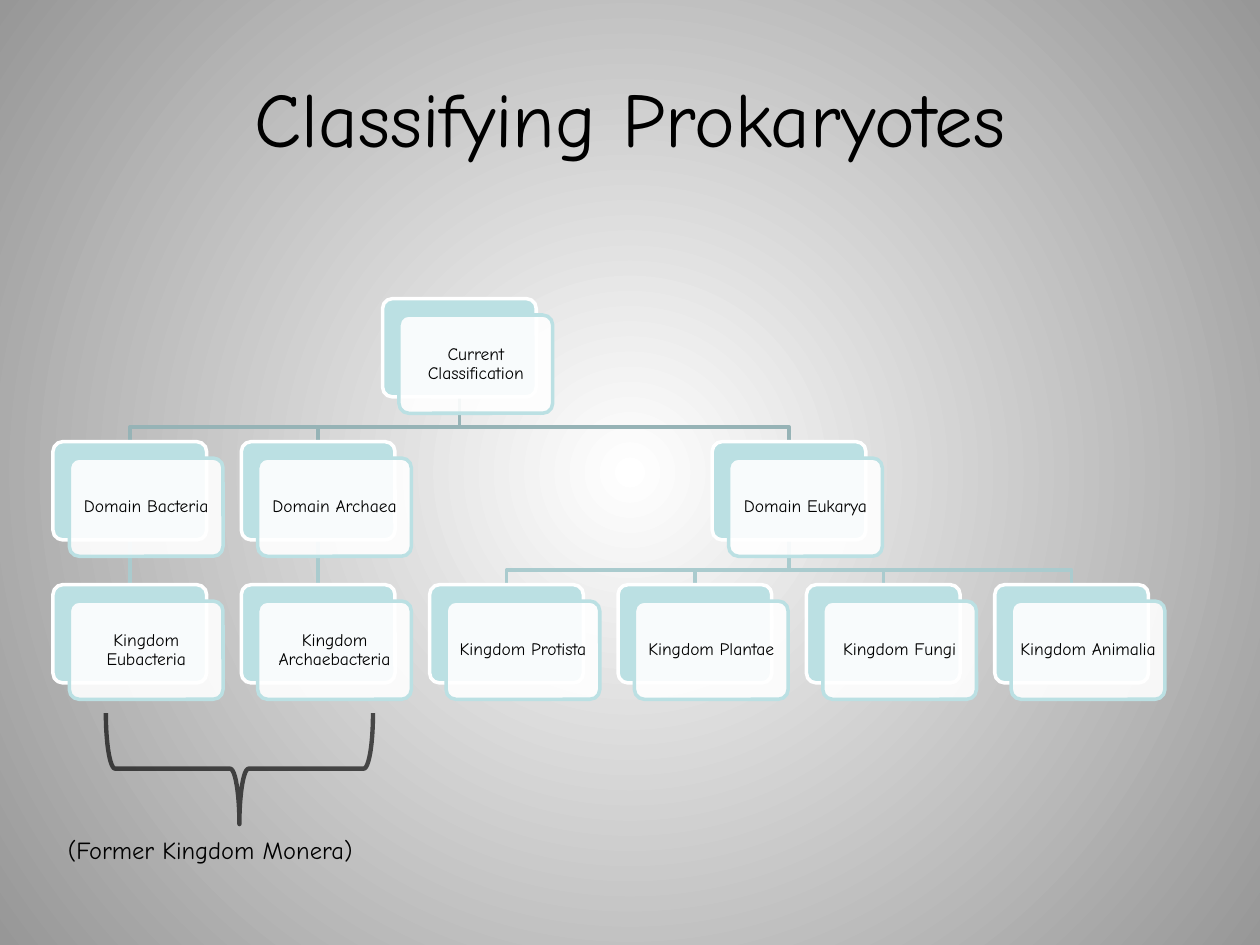
from lxml import etree
from pptx import Presentation
from pptx.dml.color import RGBColor
from pptx.enum.shapes import MSO_CONNECTOR as CONNECTOR, MSO_SHAPE as SHAPE
from pptx.enum.text import MSO_ANCHOR as ANCHOR, PP_ALIGN as ALIGN
from pptx.oxml.ns import qn
from pptx.util import Inches, Pt

# Tree grid, in inches
LEFT, TOP = 0.42, 2.37
COLUMN_STEP, ROW_STEP = 1.495, 1.135
CARD_W, CARD_H = 1.22, 0.78
CARD_SHIFT = 0.13
ELBOW_DROP = 0.24

# Each node: label, column, row, parent label
NODES = [
    ("Current Classification", 1.75, 0, None),
    ("Domain Bacteria", 0, 1, "Current Classification"),
    ("Kingdom Eubacteria", 0, 2, "Domain Bacteria"),
    ("Domain Archaea", 1, 1, "Current Classification"),
    ("Kingdom Archaebacteria", 1, 2, "Domain Archaea"),
    ("Domain Eukarya", 3.5, 1, "Current Classification"),
    ("Kingdom Protista", 2, 2, "Domain Eukarya"),
    ("Kingdom Plantae", 3, 2, "Domain Eukarya"),
    ("Kingdom Fungi", 4, 2, "Domain Eukarya"),
    ("Kingdom Animalia", 5, 2, "Domain Eukarya"),
]
LINK_COLORS = {1: "96B3B6", 2: "AACBCE"}


def rgb(code):
    return RGBColor.from_string(code)


def set_alpha(fill_parent, percent):
    color = fill_parent.find(qn("a:solidFill")).find(qn("a:srgbClr"))
    etree.SubElement(color, qn("a:alpha"), val=str(percent * 1000))


class TreeSlide:
    font = "Comic Neue"
    ink = "000000"
    accent = "BBE0E3"
    paper = "FFFFFF"

    def __init__(self, slide):
        self.slide = slide
        self.shapes = slide.shapes

    def background(self, center, edge):
        fill = self.slide.background.fill
        fill.gradient()
        for stop, color, position in zip(fill.gradient_stops, (center, edge), (0, 1)):
            stop.color.rgb = rgb(color)
            stop.position = position
        gradient = self.slide.element.find(".//" + qn("a:gradFill"))
        gradient.remove(gradient.find(qn("a:lin")))
        circle = etree.SubElement(gradient, qn("a:path"), path="circle")
        etree.SubElement(circle, qn("a:fillToRect"), l="50000", t="50000", r="50000", b="50000")

    def set_words(self, frame, words, size, align, anchor):
        frame.word_wrap = True
        frame.vertical_anchor = anchor
        frame.text = words
        paragraph = frame.paragraphs[0]
        paragraph.alignment = align
        font = paragraph.runs[0].font
        font.name, font.size = self.font, Pt(size)
        font.color.rgb = rgb(self.ink)
        return paragraph

    def text(self, words, left, top, width, height, size, align, anchor):
        box = self.shapes.add_textbox(Inches(left), Inches(top), Inches(width), Inches(height))
        return self.set_words(box.text_frame, words, size, align, anchor)

    def panel(self, left, top, fill, line):
        panel = self.shapes.add_shape(SHAPE.ROUNDED_RECTANGLE, Inches(left), Inches(top),
                                      Inches(CARD_W), Inches(CARD_H))
        panel.shadow.inherit = False
        panel.adjustments[0] = 0.1
        panel.fill.solid()
        panel.fill.fore_color.rgb = rgb(fill)
        panel.line.color.rgb = rgb(line)
        panel.line.width = Pt(2)
        return panel

    def card(self, label, left, top):
        self.panel(left, top, self.accent, self.paper)
        front = self.panel(left + CARD_SHIFT, top + CARD_SHIFT, self.paper, self.accent)
        set_alpha(front.element.spPr, 90)
        frame = front.text_frame
        frame.margin_left = frame.margin_right = Inches(0.04)
        frame.margin_top = frame.margin_bottom = Inches(0.04)
        self.set_words(frame, label, 10, ALIGN.CENTER, ANCHOR.MIDDLE).line_spacing = 0.9

    def link(self, start, end, color):
        (x1, y1), (x2, y2) = [(Inches(x), Inches(y)) for x, y in (start, end)]
        if x1 == x2:
            branch = self.shapes.add_connector(CONNECTOR.STRAIGHT, x1, y1, x2, y2)
            etree.SubElement(branch.element.spPr, qn("a:effectLst"))
        else:
            bend = y1 + Inches(ELBOW_DROP)
            builder = self.shapes.build_freeform(x1, y1)
            builder.add_line_segments([(x1, bend), (x2, bend), (x2, y2)], close=False)
            branch = builder.convert_to_shape()
            branch.shadow.inherit = False
            branch.fill.background()
        branch.line.color.rgb = rgb(color)
        branch.line.width = Pt(2)

    def brace(self, left, top, width, height):
        brace = self.shapes.add_shape(SHAPE.LEFT_BRACE, Inches(left), Inches(top),
                                      Inches(width), Inches(height))
        brace.rotation = 270
        brace.shadow.inherit = False
        brace.fill.background()
        brace.line.color.rgb = rgb(self.ink)
        brace.line.width = Pt(2.5)
        set_alpha(brace.element.spPr.find(qn("a:ln")), 66)


def main():
    deck = Presentation()
    deck.slide_width, deck.slide_height = Inches(10), Inches(7.5)
    page = TreeSlide(deck.slides.add_slide(deck.slide_layouts[6]))
    page.background("FFFFFF", "979797")

    # Title and caption
    page.text("Classifying Prokaryotes", 0, 0.3, 10, 1.25, 44, ALIGN.CENTER, ANCHOR.MIDDLE)
    caption = page.text("(Former Kingdom Monera)", 0.44, 6.58, 2.92, 0.33, 14,
                        ALIGN.LEFT, ANCHOR.TOP)
    caption.space_before = Pt(2.8)

    # Branches, behind the cards
    corners = {label: (LEFT + column * COLUMN_STEP, TOP + row * ROW_STEP)
               for label, column, row, _ in NODES}
    for label, _, row, parent in reversed(NODES):
        if parent:
            parent_left, parent_top = corners[parent]
            left, top = corners[label]
            page.link((parent_left + CARD_W / 2, parent_top + CARD_H),
                      (left + CARD_W / 2, top), LINK_COLORS[row])

    # Cards
    for label, corner in corners.items():
        page.card(label, *corner)

    # Brace under the two former Monera kingdoms
    page.brace(1.46, 5.04, 0.88, 2.12)

    deck.save("out.pptx")


if __name__ == "__main__":
    main()
